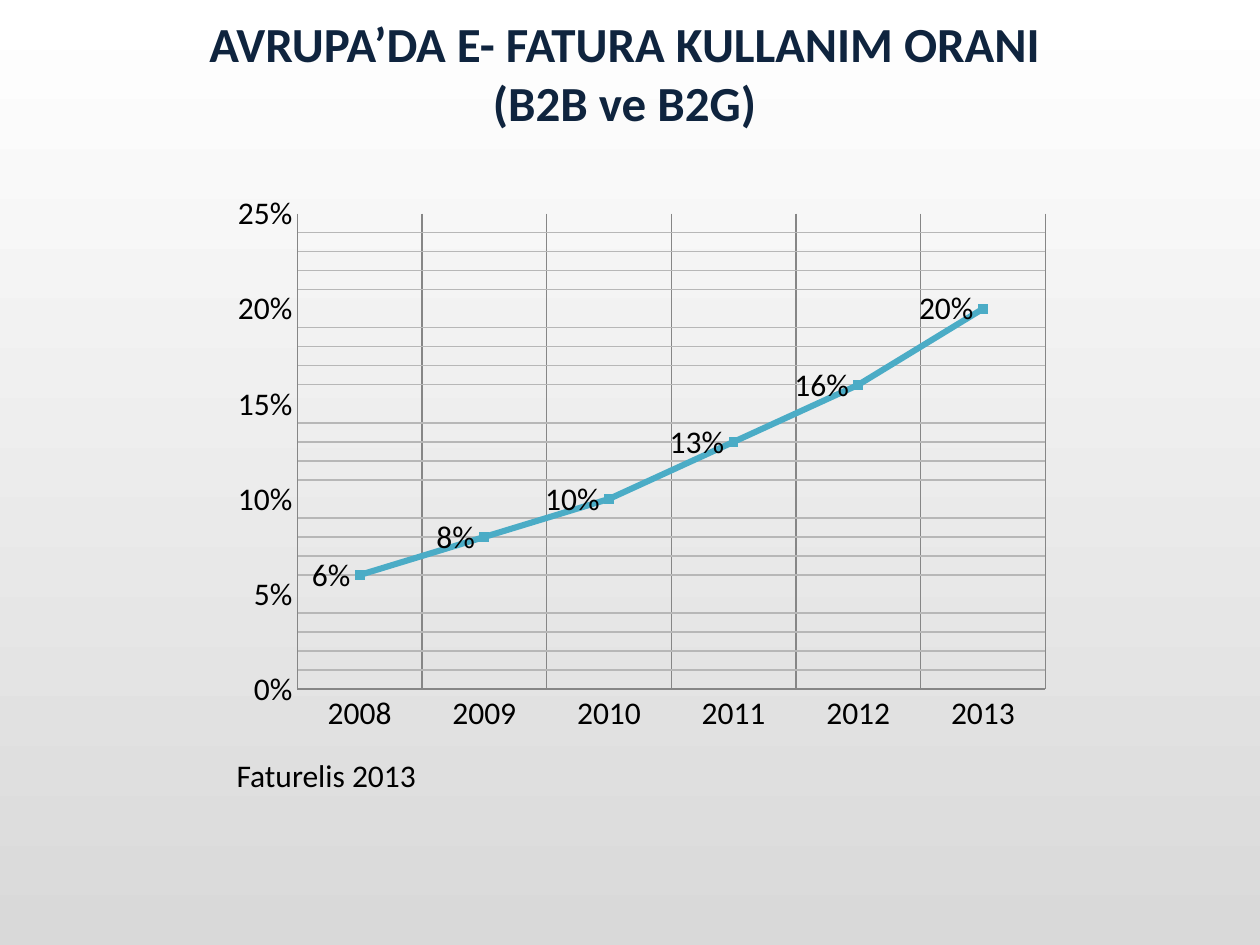
import pptx
import pptx.util
import pptx.chart.data
import pptx.oxml
from pptx.dml.color import RGBColor
from pptx.enum.chart import (XL_CHART_TYPE, XL_LABEL_POSITION,
                             XL_MARKER_STYLE, XL_TICK_MARK)
from pptx.enum.text import MSO_AUTO_SIZE, PP_ALIGN
from pptx.oxml.ns import nsdecls
from pptx.util import Inches, Pt

NAVY = RGBColor(0x0F, 0x24, 0x3E)
BLACK = RGBColor(0, 0, 0)
WHITE = RGBColor(0xFF, 0xFF, 0xFF)
SILVER = RGBColor(0xD9, 0xD9, 0xD9)
GRID = RGBColor(0x86, 0x86, 0x86)
MINOR = RGBColor(0xB7, 0xB7, 0xB7)
TEAL = RGBColor(0x4B, 0xAC, 0xC6)


class Page:
    face = "Calibri"

    def __init__(self, slide):
        self.slide = slide

    def back(self, top, bottom):
        fill = self.slide.background.fill
        fill.gradient()
        fill.gradient_angle = 270
        for stop, color, pos in zip(fill.gradient_stops, (top, bottom), (0, 1)):
            stop.color.rgb = color
            stop.position = pos

    def style(self, font, size, color, bold=False):
        font.name = self.face
        font.size = Pt(size)
        font.bold = bold
        font.color.rgb = color

    def text(self, box, lines, size, color, bold=False, align=PP_ALIGN.LEFT):
        frame = self.slide.shapes.add_textbox(*map(Inches, box)).text_frame
        frame.word_wrap = True
        frame.auto_size = MSO_AUTO_SIZE.SHAPE_TO_FIT_TEXT
        frame.text = "\n".join(lines)
        for para in frame.paragraphs:
            para.alignment = align
            self.style(para.font, size, color, bold)

    def chart(self, box, cats, name, vals, plot):
        data = pptx.chart.data.CategoryChartData(number_format="0%")
        data.categories = cats
        data.add_series(name, vals)
        chart = self.slide.shapes.add_chart(
            XL_CHART_TYPE.LINE_MARKERS, *map(Inches, box), data).chart
        chart.has_legend = False
        chart.has_title = False
        chart.plots[0].vary_by_categories = False
        self.style(chart.font, 18, BLACK)
        self.axes(chart)
        self.series(chart.plots[0].series[0])
        self.place(chart, plot)

    def axes(self, chart):
        years, rates = chart.category_axis, chart.value_axis
        for axis in (years, rates):
            axis.major_tick_mark = XL_TICK_MARK.NONE
            axis.minor_tick_mark = XL_TICK_MARK.NONE
            self.line(axis.format.line, GRID, 0.75)
        years.has_major_gridlines = True
        self.line(years.major_gridlines.format.line, GRID, 0.75)
        rates.minimum_scale, rates.maximum_scale = 0, 0.25
        rates.major_unit, rates.minor_unit = 0.05, 0.01
        rates.has_major_gridlines = False
        rates.has_minor_gridlines = True
        grid = rates._element.xpath("c:minorGridlines")[0]
        grid.append(pptx.oxml.parse_xml(
            f'<c:spPr {nsdecls("c", "a")}><a:ln w="{Pt(0.75)}"><a:solidFill>'
            f'<a:srgbClr val="{MINOR}"/></a:solidFill></a:ln></c:spPr>'))
        rates.tick_labels.number_format = "0%"
        rates.tick_labels.number_format_is_linked = False

    def line(self, line, color, width):
        line.color.rgb = color
        line.width = Pt(width)

    def series(self, series):
        series.smooth = False
        self.line(series.format.line, TEAL, 3.5)
        mark = series.marker
        mark.style = XL_MARKER_STYLE.SQUARE
        mark.size = 5
        mark.format.fill.solid()
        mark.format.fill.fore_color.rgb = TEAL
        mark.format.line.color.rgb = TEAL
        labels = series.data_labels
        labels.show_value = True
        labels.position = XL_LABEL_POSITION.LEFT
        labels.number_format = "0%"
        labels.number_format_is_linked = False
        self.style(labels.font, 18, BLACK)

    def place(self, chart, plot):
        """Fix the inner plot area, as fractions of the chart."""
        area = chart.plots[0]._element.getparent()
        for old in area.xpath("c:layout"):
            area.remove(old)
        sizes = "".join(f'<c:{tag} val="{val}"/>' for tag, val in zip("xywh", plot))
        area.insert(0, pptx.oxml.parse_xml(
            f'<c:layout {nsdecls("c")}><c:manualLayout>'
            '<c:layoutTarget val="inner"/><c:xMode val="edge"/>'
            f'<c:yMode val="edge"/>{sizes}</c:manualLayout></c:layout>'))


def main():
    deck = pptx.Presentation()
    deck.slide_width, deck.slide_height = Inches(10), Inches(7.5)
    page = Page(deck.slides.add_slide(deck.slide_layouts[6]))
    page.back(WHITE, SILVER)

    # Usage rate by year
    page.chart((1.76, 1.43, 6.67, 4.44), [str(year) for year in range(2008, 2014)],
               "Series 1", (0.06, 0.08, 0.1, 0.13, 0.16, 0.2),
               (0.09, 0.06, 0.89, 0.85))

    # Title
    page.text((0.98, 0.06, 8.04, 1.04),
              ("AVRUPA’DA E- FATURA KULLANIM ORANI ", "(B2B ve B2G) "),
              28, NAVY, True, PP_ALIGN.CENTER)

    # Data credit
    page.text((1.78, 5.95, 1.97, 0.4), ("Faturelis 2013",), 18, BLACK)

    deck.save("out.pptx")


if __name__ == "__main__":
    main()
